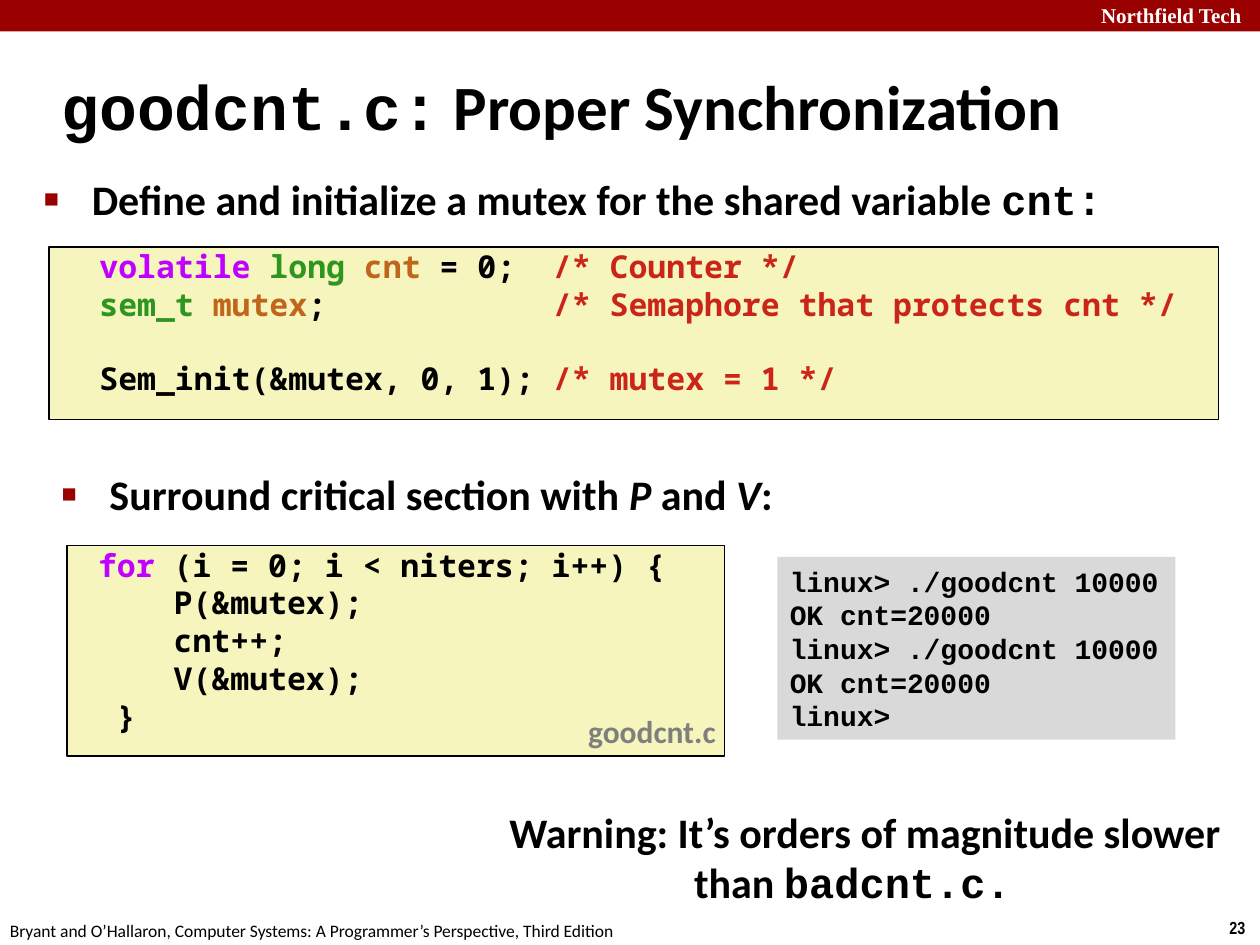
import pptx
import pptx.dml.color
import pptx.enum.shapes
import pptx.enum.text
import pptx.util
from lxml import etree
from pptx.util import Inches

COLORS = {
    "text": "000000", "white": "FFFFFF", "brand": "990000", "code_fill": "F6F5BD",
    "output_fill": "D9D9D9", "file_label": "7F7F7F", "keyword": "C200FF",
    "type": "2D961E", "variable": "C1651C", "comment": "CB2418",
}
SANS, MONO, CODE = "Calibri", "Courier New", "Noto Sans Mono"
MIDDLE = pptx.enum.text.MSO_ANCHOR.MIDDLE


class SlideBuilder:
    def __init__(self, slide):
        self.slide = slide

    def color(self, name):
        return pptx.dml.color.RGBColor.from_string(COLORS[name])

    def box(self, left, top, width, height, fill, outlined=False):
        box = self.slide.shapes.add_shape(
            pptx.enum.shapes.MSO_SHAPE.RECTANGLE,
            Inches(left), Inches(top), Inches(width), Inches(height))
        box.shadow.inherit = False
        box.fill.solid()
        box.fill.fore_color.rgb = self.color(fill)
        if outlined:
            box.line.color.rgb = self.color("text")
            box.line.width = pptx.util.Pt(1)
        else:
            box.line.fill.background()
        return box

    def style_font(self, target, size, font, color, bold):
        target.size = pptx.util.Pt(size)
        target.bold = bold
        target.name = font
        target.color.rgb = self.color(color)

    def set_lines(self, shape, lines, size, font=SANS, color="text", bold=True,
                  wrap=True, grow=False, anchor=pptx.enum.text.MSO_ANCHOR.TOP):
        """Fill a shape; each line is a string or a list of (text, overrides) runs."""
        frame = shape.text_frame
        frame.word_wrap = wrap
        frame.vertical_anchor = anchor
        if grow:
            frame.auto_size = pptx.enum.text.MSO_AUTO_SIZE.SHAPE_TO_FIT_TEXT
        for index, line in enumerate(lines):
            paragraph = frame.add_paragraph() if index else frame.paragraphs[0]
            paragraph.alignment = pptx.enum.text.PP_ALIGN.LEFT
            self.style_font(paragraph.font, size, font, color, bold)
            for text, style in [(line, {})] if isinstance(line, str) else line:
                run = paragraph.add_run()
                run.text = text
                run.font.italic = style.get("italic")
                self.style_font(run.font, size, style.get("font", font),
                                style.get("color", color), bold)
        return frame.paragraphs

    def text(self, left, top, width, height, lines, size, **style):
        label = self.slide.shapes.add_textbox(
            Inches(left), Inches(top), Inches(width), Inches(height))
        return self.set_lines(label, lines, size, **style)

    def hang(self, paragraph, indent):
        properties = paragraph._p.get_or_add_pPr()
        properties.set("marL", str(Inches(indent)))
        properties.set("indent", str(-Inches(indent)))
        return properties

    def bullet(self, left, top, runs):
        paragraph = self.text(left, top, 9.09, 0.5, [runs], 24)[0]
        properties = self.hang(paragraph, 0.38)
        namespace = "http://schemas.openxmlformats.org/drawingml/2006/main"
        marks = etree.fromstring(
            f'<a:marks xmlns:a="{namespace}">'
            f'<a:buClr><a:srgbClr val="{COLORS["brand"]}"/></a:buClr>'
            '<a:buSzPct val="60000"/><a:buFont typeface="Arial"/>'
            '<a:buChar char="■"/></a:marks>')
        for position, mark in enumerate(list(marks)):
            properties.insert(position, mark)

    def code(self, left, top, width, height, lines):
        listing = self.box(left, top, width, height, "code_fill", outlined=True)
        listing.text_frame.margin_top = listing.text_frame.margin_bottom = 0
        return self.set_lines(listing, lines, 18, font=CODE)


def main():
    deck = pptx.Presentation()
    deck.slide_width, deck.slide_height = Inches(10), Inches(7.5)
    page = SlideBuilder(deck.slides.add_slide(deck.slide_layouts[6]))
    mono, italic = {"font": MONO}, {"italic": True}
    keyword, kind, variable, comment = (
        {"color": name} for name in ("keyword", "type", "variable", "comment"))

    page.box(0, 0, 10, 0.25, "brand")
    page.text(8.64, -0.03, 1.43, 0.3, ["Northfield Tech"], 12,
              font="Times New Roman", color="white", grow=True)
    page.text(9.66, 7.23, 0.34, 0.27, ["23"], 10, font="Arial Narrow",
              wrap=False, grow=True)
    page.text(-0.02, 7.25, 5.08, 0.27,
              ["Bryant and O’Hallaron, Computer Systems: "
               "A Programmer’s Perspective, Third Edition"],
              10, bold=False, wrap=False, grow=True)

    title = page.text(0.39, 0.42, 8.3, 0.83,
                      [[("goodcnt.c:", mono), (" Proper Synchronization", {})]],
                      36, anchor=MIDDLE)
    page.hang(title[0], 0.13)

    page.bullet(0.25, 1.33, [
        ("Define and initialize a mutex for the shared variable ", {}),
        ("cnt:", mono)])
    declarations = page.code(0.39, 1.96, 9.28, 1.37, [
        [("  ", {}), ("volatile ", keyword), ("long ", kind), ("cnt", variable),
         (" = 0;  ", {}), ("/* Counter */", comment)],
        [("  ", {}), ("sem_t ", kind), ("mutex", variable),
         (";            ", {}), ("/* Semaphore that protects cnt */", comment)],
        [("  Sem_init(&mutex, 0, 1); ", {}), ("/* mutex = 1 */", comment)],
    ])
    declarations[-1].space_before = pptx.util.Pt(21)

    page.bullet(0.39, 3.67, [
        ("Surround critical section with ", {}), ("P", italic), (" and ", {}),
        ("V", italic), (":", {})])
    page.code(0.53, 4.33, 5.22, 1.67, [
        [(" ", {}), ("for", keyword), (" (i = 0; i < niters; i++) {", {})],
        "     P(&mutex);",
        "     cnt++;",
        "     V(&mutex);",
        "  }",
    ])

    page.set_lines(page.box(6.17, 4.42, 3.16, 1.45, "output_fill"),
                   ["linux> ./goodcnt 10000", "OK cnt=20000"] * 2 + ["linux>"],
                   16, font=MONO, wrap=False, grow=True, anchor=MIDDLE)

    warning = page.text(3.92, 6.35, 5.89, 0.91, [[
        ("Warning: It’s orders of magnitude slower than ", {}),
        ("badcnt.c. ", mono)]], 24, grow=True)
    warning[0].alignment = pptx.enum.text.PP_ALIGN.CENTER
    page.text(4.57, 5.6, 1.23, 0.4, ["goodcnt.c"], 18, color="file_label",
              wrap=False, grow=True)

    deck.save("out.pptx")


if __name__ == "__main__":
    main()
